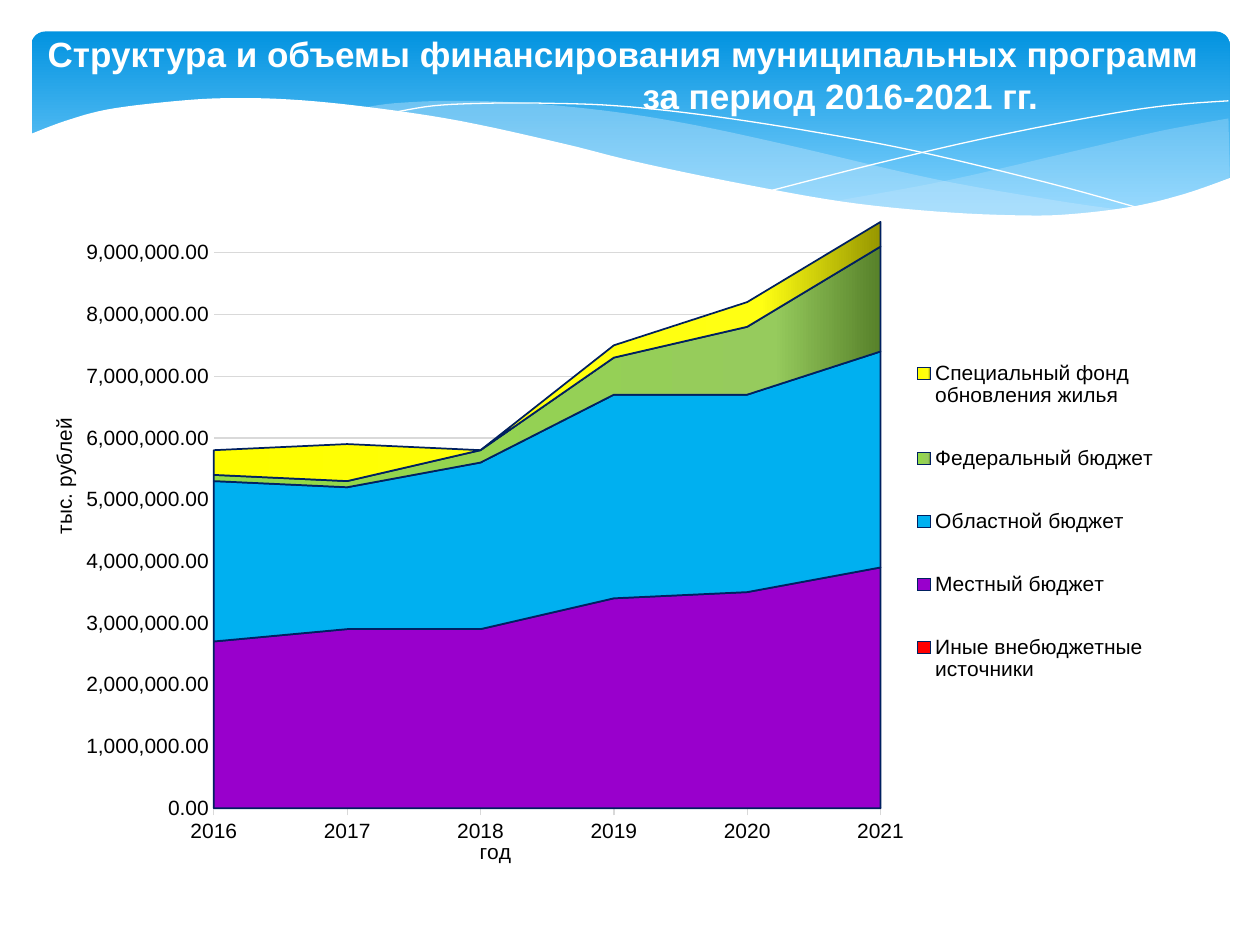
from dataclasses import dataclass
from typing import Optional

from lxml.etree import SubElement
from pptx import Presentation
from pptx.chart.data import CategoryChartData
from pptx.dml.color import RGBColor
from pptx.enum.chart import XL_CHART_TYPE as ChartType, XL_LEGEND_POSITION as LegendPosition
from pptx.enum.chart import XL_TICK_MARK as TickMark
from pptx.enum.shapes import MSO_SHAPE as Preset
from pptx.enum.text import PP_ALIGN as Align
from pptx.oxml import parse_xml
from pptx.oxml.ns import nsdecls, qn
from pptx.util import Inches, Length, Pt

WHITE = RGBColor(0xFF, 0xFF, 0xFF)
BLACK = RGBColor(0x00, 0x00, 0x00)
SKY = RGBColor(0x02, 0x93, 0xE0)
PALE_SKY = RGBColor(0x83, 0xD3, 0xFE)
MIST = RGBColor(0xC6, 0xE7, 0xFC)
NAVY = RGBColor(0x00, 0x20, 0x60)
GRID_GRAY = RGBColor(0xD9, 0xD9, 0xD9)
RED = RGBColor(0xFF, 0x00, 0x00)
PURPLE = RGBColor(0x99, 0x00, 0xCC)
BLUE = RGBColor(0x00, 0xB0, 0xF0)
GREENS = [(0, RGBColor(0x57, 0x81, 0x2A)), (16, RGBColor(0x96, 0xCB, 0x5D)),
          (100, RGBColor(0x92, 0xDA, 0x46))]
YELLOWS = [(0, RGBColor(0x97, 0x97, 0x00)), (18, RGBColor(0xFF, 0xFF, 0x13)),
           (100, RGBColor(0xFF, 0xFF, 0x00))]
FONT = "Arial"
COLUMNS, ROWS = 100, 75
MILLION = 1_000_000
SMOOTH_STEPS = 6

Knots = list[tuple[float, float]]


@dataclass
class Wave:
    """Smooth curves through grid knots, joined into one band or thread."""
    curves: list[Knots]
    color: RGBColor = WHITE
    opacity: Optional[int] = None
    closed: bool = True


@dataclass
class Budget:
    """One funding source with its yearly amounts in millions."""
    name: str
    millions: list[float]
    paint: RGBColor | list[tuple[int, RGBColor]]


WAVES = [
    Wave([[(97.5, 9.4), (92.1, 10.4), (86.1, 11.8), (75.3, 14.3), (66.1, 16)],
          [(66.1, 16), (71.9, 16.7), (76.9, 17.1), (81.4, 17.2), (85.4, 17),
           (89.7, 16.5), (93.5, 15.6), (97.6, 14.1)]], MIST, 29),
    Wave([[(89.3, 16.7), (83.7, 15.9), (74.1, 14.2), (62.9, 11.6), (55.5, 10),
           (48.9, 8.9), (42, 8.2), (36.1, 8), (31.3, 8.2), (28.6, 8.6)],
          [(28.6, 8.6), (36.2, 9.7), (44.9, 11.6), (56.6, 14.3), (66.5, 16.1),
           (74.8, 17), (81.8, 17.3), (85.7, 17.1), (89.3, 16.7)]], MIST, 40),
    Wave([[(30.9, 9), (34.4, 8.4), (38.7, 8.2), (43.3, 8.2), (48.9, 8.4), (55.6, 9.1),
           (63.6, 10.3), (72.7, 12), (83.1, 14.5), (90.7, 16.6)]], closed=False),
    Wave([[(61.3, 15.1), (69.5, 13), (77.6, 11.1), (86.6, 9.3), (92.4, 8.4), (97.5, 8)]],
         closed=False),
    Wave([[(97.7, 14.1), (94, 15.4), (89.9, 16.4), (85, 17), (80.9, 17.1), (74.4, 16.8),
           (66.8, 16), (57.9, 14.4), (50.3, 12.8), (44.7, 11.4), (36.5, 9.6), (29.2, 8.5),
           (23, 7.9), (17.7, 7.8), (13.2, 8.1), (8.5, 8.7), (5.2, 9.6), (2.3, 10.7)],
          [(2.3, 10.7), (2.3, 22.4)], [(2.3, 22.4), (97.7, 22.4)]]),
]
BUDGETS = [
    Budget("Иные внебюджетные источники", [0, 0, 0, 0, 0, 0], RED),
    Budget("Местный бюджет", [2.7, 2.9, 2.9, 3.4, 3.5, 3.9], PURPLE),
    Budget("Областной бюджет", [2.6, 2.3, 2.7, 3.3, 3.2, 3.5], BLUE),
    Budget("Федеральный бюджет", [0.1, 0.1, 0.2, 0.6, 1.1, 1.7], GREENS),
    Budget("Специальный фонд обновления жилья", [0.4, 0.6, 0, 0.2, 0.4, 0.4], YELLOWS),
]


def cells(count: float) -> Length:
    """Turn a count of square grid cells into a length."""
    return Inches(count / 10)


def paint_gradient(fill, owner, stops, degrees: int) -> None:
    """Fill an object with a linear gradient of (percent, colour) stops."""
    fill.gradient()
    gradient = owner.find(".//" + qn("a:gradFill"))
    stop_list = gradient.find(qn("a:gsLst"))
    for stop in list(stop_list):
        stop_list.remove(stop)
    for percent, color in stops:
        stop = SubElement(stop_list, qn("a:gs"), pos=str(percent * 1000))
        SubElement(stop, qn("a:srgbClr"), val=str(color))
    gradient.find(qn("a:lin")).set("ang", str(degrees * 60000))


def smooth(knots: Knots) -> Knots:
    """Sample a Catmull-Rom curve through the knots."""
    padded = [knots[0], *knots, knots[-1]]
    points = [knots[0]]
    for a, b, c, d in zip(padded, padded[1:], padded[2:], padded[3:]):
        for step in range(1, SMOOTH_STEPS + 1):
            t = step / SMOOTH_STEPS
            points.append(tuple(
                q + t * (r - p + t * (2 * p - 5 * q + 4 * r - s
                                      + t * (3 * q - 3 * r + s - p))) / 2
                for p, q, r, s in zip(a, b, c, d)))
    return points


def draw_wave(page, wave: Wave) -> None:
    """Draw a filled band or a thin open thread."""
    points = [(cells(x), cells(y)) for curve in wave.curves for x, y in smooth(curve)]
    builder = page.shapes.build_freeform(*points[0])
    builder.add_line_segments(points[1:], close=wave.closed)
    shape = builder.convert_to_shape()
    shape.shadow.inherit = False
    if not wave.closed:
        shape.fill.background()
        shape.line.color.rgb = wave.color
        shape.line.width = Pt(0)
        return
    shape.fill.solid()
    shape.fill.fore_color.rgb = wave.color
    shape.line.fill.background()
    if wave.opacity:
        color = shape.element.spPr.find(".//" + qn("a:srgbClr"))
        SubElement(color, qn("a:alpha"), val=str(wave.opacity * 1000))


def draw_banner(page) -> None:
    """Draw the sky panel and the waves over it."""
    panel = page.shapes.add_shape(Preset.ROUNDED_RECTANGLE, *map(cells, (2.5, 2.5, 95.1, 15.6)))
    panel.adjustments[0] = 0.07
    panel.shadow.inherit = False
    panel.line.fill.background()
    paint_gradient(panel.fill, panel.element.spPr, [(0, SKY), (90, PALE_SKY)], 90)
    for wave in WAVES:
        draw_wave(page, wave)


def draw_title(page) -> None:
    """Write the two-line heading."""
    box = page.shapes.add_textbox(*map(cells, (2.8, 2.1, 94.8, 7.7)))
    frame = box.text_frame
    frame.word_wrap = True
    frame.text = ("Структура и объемы финансирования муниципальных программ\n"
                  "за период 2016-2021 гг.")
    for para in frame.paragraphs:
        para.font.name, para.font.size, para.font.bold = FONT, Pt(20), True
        para.font.color.rgb = WHITE
    para.alignment = Align.CENTER
    para._p.get_or_add_pPr().set("marL", str(cells(33)))


def place(part, after: Optional[str], inner: bool = False, **shares: float) -> None:
    """Give a chart part a manual layout in shares of the chart's size."""
    old = part.find(qn("c:layout"))
    if old is not None:
        part.remove(old)
    target = '<c:layoutTarget val="inner"/>' if inner else ""
    modes = "".join(f'<c:{side}Mode val="edge"/>' for side in "xy")
    sizes = "".join(f'<c:{side} val="{share}"/>' for side, share in shares.items())
    layout = parse_xml(f'<c:layout {nsdecls("c")}><c:manualLayout>{target}{modes}{sizes}'
                       "</c:manualLayout></c:layout>")
    if after:
        part.find(qn(after)).addnext(layout)
    else:
        part.insert(0, layout)


def style_axis(axis, title: str, tick: TickMark, x: float, y: float) -> None:
    """Title an axis and set its ticks and fonts."""
    axis.major_tick_mark, axis.minor_tick_mark = tick, TickMark.NONE
    axis.axis_title.text_frame.text = title
    for font in (axis.tick_labels.font, axis.axis_title.text_frame.paragraphs[0].font):
        font.name, font.size, font.bold = FONT, Pt(12), False
        font.color.rgb = BLACK
    place(axis.axis_title._element, "c:tx", x=x, y=y)


def draw_chart(page) -> None:
    """Draw the stacked areas of funding by source."""
    data = CategoryChartData(number_format="#,##0.00")
    data.categories = [str(year) for year in range(2016, 2022)]
    for budget in BUDGETS:
        data.add_series(budget.name, [round(value * MILLION) for value in budget.millions])
    chart = page.shapes.add_chart(ChartType.AREA_STACKED,
                                  *map(cells, (2.8, 15.5, 94.5, 53.5)), data).chart
    chart.has_title = False
    chart.font.name, chart.font.size = FONT, Pt(12)
    chart.font.color.rgb = BLACK
    chart.element.find(qn("c:chart")).addnext(parse_xml(
        f'<c:spPr {nsdecls("c", "a")}><a:noFill/><a:ln><a:noFill/></a:ln></c:spPr>'))
    for series, budget in zip(chart.plots[0].series, BUDGETS):
        look = series.format
        if isinstance(budget.paint, list):
            paint_gradient(look.fill, series._element, budget.paint, 180)
        else:
            look.fill.solid()
            look.fill.fore_color.rgb = budget.paint
        look.line.color.rgb, look.line.width = NAVY, Pt(1)
    years, amounts = chart.category_axis, chart.value_axis
    style_axis(years, "год", TickMark.OUTSIDE, 0.37, 0.96)
    style_axis(amounts, "тыс. рублей", TickMark.NONE, 0.01, 0.33)
    years.has_major_gridlines, amounts.has_major_gridlines = False, True
    for line in (years.format.line, amounts.major_gridlines.format.line):
        line.color.rgb, line.width = GRID_GRAY, Pt(0.75)
    amounts.format.line.fill.background()
    amounts.minimum_scale, amounts.maximum_scale = 0, 9.5 * MILLION
    amounts.major_unit = MILLION
    amounts.tick_labels.number_format = "#,##0.00"
    amounts.tick_labels.number_format_is_linked = False
    amounts._element.find(qn("c:crossBetween")).set("val", "midCat")
    chart.has_legend = True
    legend = chart.legend
    legend.position, legend.include_in_layout = LegendPosition.RIGHT, False
    legend.font.name, legend.font.size = FONT, Pt(12)
    legend.font.color.rgb = BLACK
    place(legend._element, "c:legendPos", x=0.72, y=0.19, w=0.24, h=0.6)
    place(chart.element.find(".//" + qn("c:plotArea")), None, True,
          x=0.15, y=0.04, w=0.56, h=0.88)


def main() -> None:
    """Build the slide and save it."""
    deck = Presentation()
    deck.slide_width, deck.slide_height = cells(COLUMNS), cells(ROWS)
    page = deck.slides.add_slide(deck.slide_layouts[6])
    draw_banner(page)
    draw_title(page)
    draw_chart(page)
    deck.save("out.pptx")


if __name__ == "__main__":
    main()
